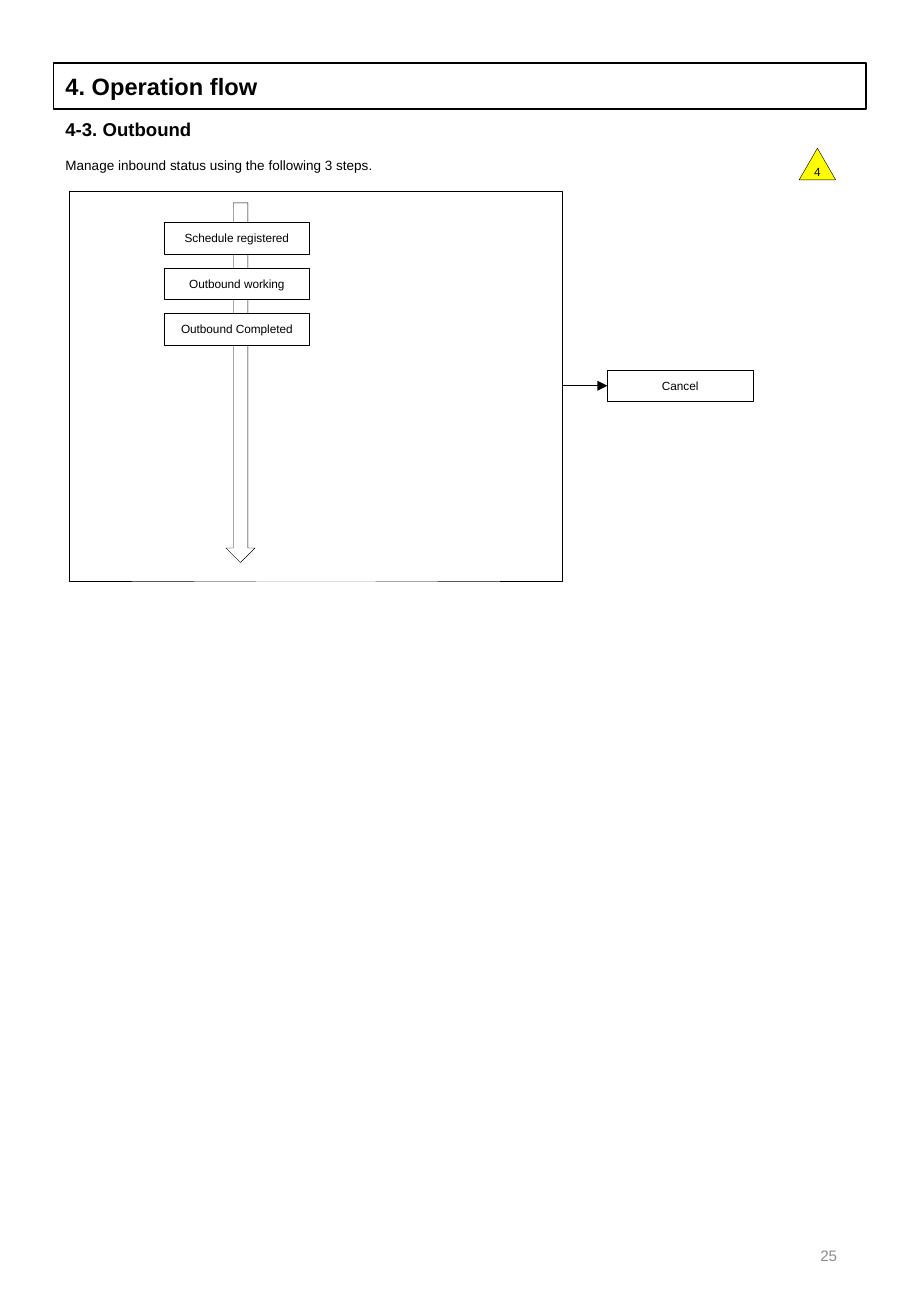
from dataclasses import dataclass
from typing import Optional

from lxml import etree
from pptx import Presentation
from pptx.dml.color import RGBColor
from pptx.enum.shapes import MSO_CONNECTOR, MSO_SHAPE
from pptx.enum.text import MSO_ANCHOR, PP_ALIGN
from pptx.oxml.ns import qn
from pptx.shapes.autoshape import Shape
from pptx.shapes.shapetree import SlideShapes
from pptx.util import Emu, Pt

EMU_PER_PX = 4572  # 200 px to the inch
FONT = "Arial"
BLACK = RGBColor(0x00, 0x00, 0x00)
GREY = RGBColor(0x8C, 0x8C, 0x8C)
WHITE = RGBColor(0xFF, 0xFF, 0xFF)
YELLOW = RGBColor(0xFF, 0xFF, 0x00)

RECTANGLE, TRIANGLE = MSO_SHAPE.RECTANGLE, MSO_SHAPE.ISOSCELES_TRIANGLE
RIGHT_ARROW = MSO_SHAPE.RIGHT_ARROW
STRAIGHT = MSO_CONNECTOR.STRAIGHT
TOP, MIDDLE = MSO_ANCHOR.TOP, MSO_ANCHOR.MIDDLE
LEFT, CENTER, RIGHT = PP_ALIGN.LEFT, PP_ALIGN.CENTER, PP_ALIGN.RIGHT
LEFT_SIDE, RIGHT_SIDE = 1, 3

MARGIN_LEFT, CONTENT_WIDTH = 88, 1338
STEP_WIDTH, STEP_HEIGHT = 240, 52
STEP_LEFT, FIRST_STEP_TOP, STEP_PITCH = 270, 366, 75
STEPS = ("Schedule registered", "Outbound working", "Outbound Completed")


@dataclass(frozen=True)
class Box:
    left: int
    top: int
    width: int
    height: int

    def emu(self) -> tuple[Emu, ...]:
        sides = (self.left, self.top, self.width, self.height)
        return tuple(Emu(side * EMU_PER_PX) for side in sides)


@dataclass(frozen=True)
class Label:
    text: str
    size: int
    bold: bool = False
    color: RGBColor = BLACK
    align: PP_ALIGN = LEFT
    anchor: MSO_ANCHOR = TOP


def write_label(shape: Shape, label: Label) -> None:
    frame = shape.text_frame
    frame.word_wrap = True
    frame.vertical_anchor = label.anchor
    paragraph = frame.paragraphs[0]
    paragraph.alignment = label.align
    run = paragraph.add_run()
    run.text = label.text
    run.font.name = FONT
    run.font.size = Pt(label.size)
    run.font.bold = label.bold
    run.font.color.rgb = label.color


def add_text(shapes: SlideShapes, box: Box, label: Label) -> None:
    write_label(shapes.add_textbox(*box.emu()), label)


def add_outlined(shapes: SlideShapes, kind: MSO_SHAPE, box: Box,
                 fill: Optional[RGBColor] = WHITE, line_width: float = 0.25) -> Shape:
    shape = shapes.add_shape(kind, *box.emu())
    shape.shadow.inherit = False
    if fill is None:
        shape.fill.background()
    else:
        shape.fill.solid()
        shape.fill.fore_color.rgb = fill
    shape.line.color.rgb = BLACK
    shape.line.width = Pt(line_width)
    return shape


def add_tag(shapes: SlideShapes, kind: MSO_SHAPE, box: Box, text: str,
            fill: Optional[RGBColor] = WHITE) -> Shape:
    """Add a small shape with centred text and no inner margins."""
    tag = add_outlined(shapes, kind, box, fill)
    frame = tag.text_frame
    frame.margin_left = frame.margin_right = 0
    frame.margin_top = frame.margin_bottom = 0
    write_label(tag, Label(text, 7, align=CENTER, anchor=MIDDLE))
    return tag


def add_arrow(shapes: SlideShapes, source: Shape, target: Shape) -> None:
    """Join the right side of source to the left side of target."""
    arrow = shapes.add_connector(STRAIGHT, 0, 0, 0, 0)
    arrow.begin_connect(source, RIGHT_SIDE)
    arrow.end_connect(target, LEFT_SIDE)
    arrow.line.color.rgb = BLACK
    arrow.line.width = Pt(0.5)
    etree.SubElement(arrow.line._get_or_add_ln(), qn("a:tailEnd"), type="triangle")
    etree.SubElement(arrow._element.spPr, qn("a:effectLst"))


def add_headings(shapes: SlideShapes) -> None:
    title = add_outlined(shapes, RECTANGLE, Box(MARGIN_LEFT, 104, CONTENT_WIDTH, 76),
                         fill=None, line_width=1)
    write_label(title, Label("4. Operation flow", 14, bold=True, anchor=MIDDLE))
    add_text(shapes, Box(MARGIN_LEFT, 184, CONTENT_WIDTH, 58),
             Label("4-3. Outbound", 11, bold=True))
    add_text(shapes, Box(MARGIN_LEFT, 248, CONTENT_WIDTH, 48),
             Label("Manage inbound status using the following 3 steps.", 8))


def add_flow(shapes: SlideShapes) -> None:
    flow_frame = add_outlined(shapes, RECTANGLE, Box(314, 314, 812, 642))
    flow_frame.left = Emu(114 * EMU_PER_PX)
    progress = add_outlined(shapes, RIGHT_ARROW, Box(100, 606, 592, 48))
    progress.rotation = 90
    for index, step in enumerate(STEPS):
        top = FIRST_STEP_TOP + index * STEP_PITCH
        add_tag(shapes, RECTANGLE, Box(STEP_LEFT, top, STEP_WIDTH, STEP_HEIGHT), step)
    cancel = add_tag(shapes, RECTANGLE, Box(1000, 609, STEP_WIDTH, STEP_HEIGHT),
                     "Cancel", fill=None)
    add_arrow(shapes, flow_frame, cancel)


def main() -> None:
    presentation = Presentation()
    presentation.slide_width = Emu(1500 * EMU_PER_PX)
    presentation.slide_height = Emu(2166 * EMU_PER_PX)
    blank_layout = presentation.slide_layouts[6]
    shapes = presentation.slides.add_slide(blank_layout).shapes
    add_headings(shapes)
    add_flow(shapes)
    add_tag(shapes, TRIANGLE, Box(1316, 244, 60, 52), "4", fill=YELLOW)
    add_text(shapes, Box(1060, 2008, 338, 116),
             Label("25", 9, color=GREY, align=RIGHT, anchor=MIDDLE))
    presentation.save("out.pptx")


if __name__ == "__main__":
    main()
